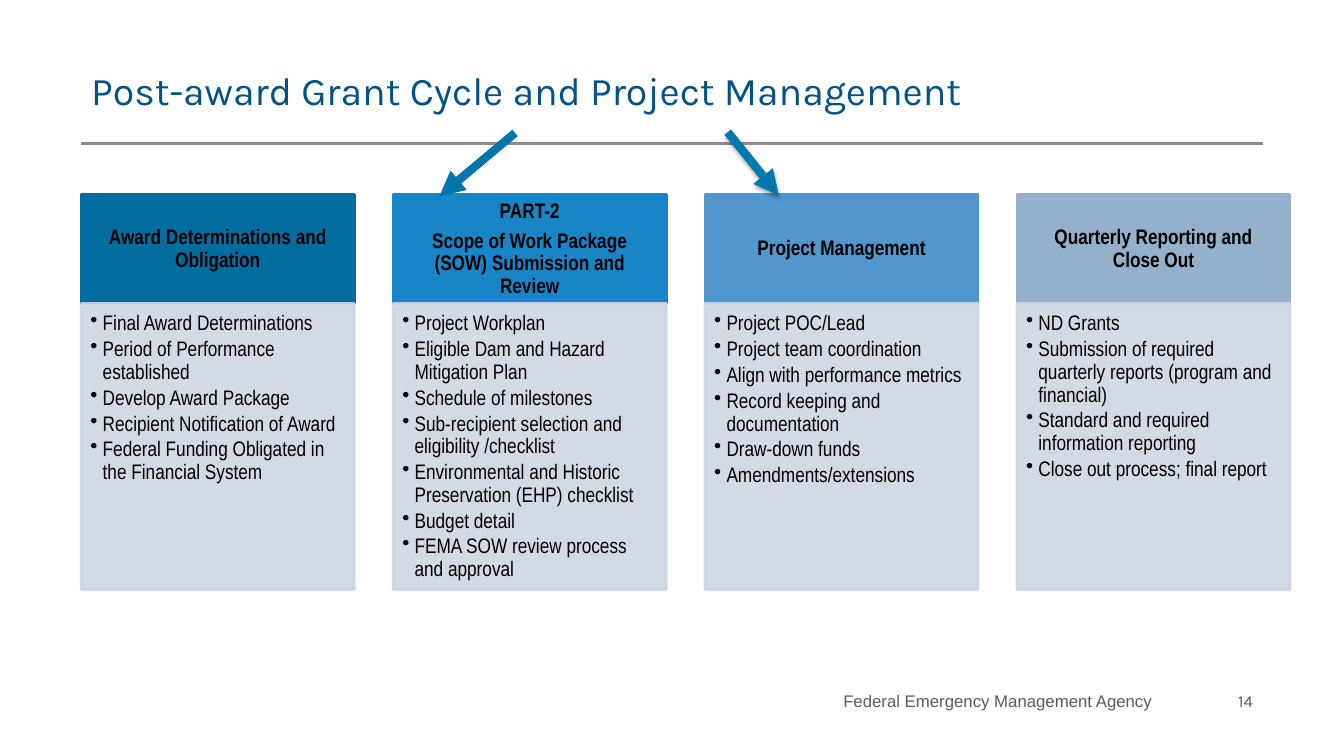
from dataclasses import dataclass

from lxml.etree import SubElement
from pptx import Presentation
from pptx.dml.color import RGBColor
from pptx.enum.shapes import MSO_CONNECTOR, MSO_SHAPE
from pptx.enum.text import MSO_ANCHOR, PP_ALIGN
from pptx.oxml.ns import qn
from pptx.shapes.autoshape import Shape
from pptx.shapes.connector import Connector
from pptx.slide import Slide
from pptx.text.text import TextFrame
from pptx.util import Cm, Pt

COLORS = {
    "title": "005288", "rule": "8A8C8F", "footer": "5A5B5D", "text": "000000",
    "body": "CCD6E3", "award": "006D9E", "scope": "1885C6", "project": "5197CE",
    "reporting": "95B0CB", "left_arrow": "0075AA", "right_arrow": "0078AE",
}
COLUMN_LEFT, COLUMN_PITCH, COLUMN_WIDTH = 2.05, 7.86, 6.88
HEADER_TOP, HEADER_HEIGHT, BODY_HEIGHT = 4.9, 2.75, 7.21


@dataclass
class Stage:
    color: str
    heading: str
    bullets: list[str]


@dataclass
class Label:
    text: str
    left: float
    top: float
    width: float
    height: float
    font: str
    size: int
    color: str
    align: PP_ALIGN


@dataclass
class Line:
    start: tuple[float, float]
    end: tuple[float, float]
    color: str
    width: float
    arrow: bool = True
    shadow: bool = False


STAGES = [
    Stage("award", "Award Determinations and Obligation", [
        "Final Award Determinations",
        "Period of Performance established",
        "Develop Award Package",
        "Recipient Notification of Award",
        "Federal Funding Obligated in the Financial System",
    ]),
    Stage("scope", "PART-2\nScope of Work Package (SOW) Submission and Review", [
        "Project Workplan",
        "Eligible Dam and Hazard Mitigation Plan",
        "Schedule of milestones",
        "Sub-recipient selection and eligibility /checklist",
        "Environmental and Historic Preservation (EHP) checklist",
        "Budget detail",
        "FEMA SOW review process and approval",
    ]),
    Stage("project", "Project Management", [
        "Project POC/Lead",
        "Project team coordination",
        "Align with performance metrics",
        "Record keeping and documentation",
        "Draw-down funds",
        "Amendments/extensions",
    ]),
    Stage("reporting", "Quarterly Reporting and Close Out", [
        "ND Grants",
        "Submission of required quarterly reports (program and financial)",
        "Standard and required information reporting",
        "Close out process; final report",
    ]),
]
LABELS = [
    Label("Post-award Grant Cycle and Project Management", 2.05, 1.25, 29.77, 2.05,
          "Karla", 28, "title", PP_ALIGN.LEFT),
    Label("Federal Emergency Management Agency", 16.94, 17.15, 12.35, 1.02,
          "Arial", 12, "footer", PP_ALIGN.RIGHT),
    Label("14", 29.29, 17.15, 2.54, 1.02, "Karla", 12, "footer", PP_ALIGN.RIGHT),
]
RULE = Line((2.05, 3.61), (31.82, 3.61), "rule", 2, arrow=False)
ARROWS = [
    Line((12.98, 3.35), (11.07, 4.95), "left_arrow", 6),
    Line((18.34, 3.33), (19.63, 4.93), "right_arrow", 6, shadow=True),
]


def rgb(name: str) -> RGBColor:
    return RGBColor.from_string(COLORS[name])


def style_text(text_frame: TextFrame, font: str, size: int, color: str,
               align: PP_ALIGN, bold: bool = False) -> None:
    text_frame.word_wrap = True
    for paragraph in text_frame.paragraphs:
        paragraph.alignment = align
        for run in paragraph.runs:
            run.font.name = font
            run.font.size = Pt(size)
            run.font.bold = bold
            run.font.color.rgb = rgb(color)


def add_label(slide: Slide, label: Label) -> None:
    box = slide.shapes.add_textbox(Cm(label.left), Cm(label.top), Cm(label.width), Cm(label.height))
    box.text_frame.text = label.text
    box.text_frame.vertical_anchor = MSO_ANCHOR.MIDDLE
    style_text(box.text_frame, label.font, label.size, label.color, label.align)


def add_line(slide: Slide, line: Line) -> Connector:
    points = [Cm(value) for value in (*line.start, *line.end)]
    connector = slide.shapes.add_connector(MSO_CONNECTOR.STRAIGHT, *points)
    connector.line.color.rgb = rgb(line.color)
    connector.line.width = Pt(line.width)
    properties = connector._element.spPr
    if line.arrow:
        SubElement(properties.find(qn("a:ln")), qn("a:tailEnd"), type="triangle")
    effects = SubElement(properties, qn("a:effectLst"))
    if line.shadow:
        shadow = SubElement(effects, qn("a:outerShdw"), blurRad=str(Pt(3.1)),
                            dist=str(Pt(1.8)), dir="5400000", rotWithShape="0")
        black = SubElement(shadow, qn("a:srgbClr"), val=COLORS["text"])
        SubElement(black, qn("a:alpha"), val="35000")
    return connector


def add_block(slide: Slide, left: float, top: float, height: float, color: str,
              text: str, insets: tuple[float, float, float, float]) -> Shape:
    shape = slide.shapes.add_shape(MSO_SHAPE.RECTANGLE, Cm(left), Cm(top), Cm(COLUMN_WIDTH), Cm(height))
    shape.shadow.inherit = False
    shape.fill.solid()
    shape.fill.fore_color.rgb = rgb(color)
    shape.line.color.rgb = rgb(color)
    shape.line.width = Pt(2)
    frame = shape.text_frame
    frame.text = text
    frame.margin_left, frame.margin_top, frame.margin_right, frame.margin_bottom = map(Cm, insets)
    return shape


def space_paragraphs(text_frame: TextFrame, after: float) -> None:
    for paragraph in text_frame.paragraphs:
        paragraph.line_spacing = 0.9
        paragraph.space_after = Pt(after)


def add_stage(slide: Slide, stage: Stage, left: float) -> None:
    header = add_block(slide, left, HEADER_TOP, HEADER_HEIGHT, stage.color,
                       stage.heading, (0.3, 0.17, 0.3, 0.17))
    header.text_frame.vertical_anchor = MSO_ANCHOR.MIDDLE
    style_text(header.text_frame, "Arial Narrow", 15, "text", PP_ALIGN.CENTER, bold=True)
    space_paragraphs(header.text_frame, 5.25)

    body = add_block(slide, left, HEADER_TOP + HEADER_HEIGHT, BODY_HEIGHT, "body",
                     "\n".join(stage.bullets), (0.23, 0.23, 0.3, 0.34))
    for color in body._element.spPr.iter(qn("a:srgbClr")):
        SubElement(color, qn("a:alpha"), val="90000")
    body.text_frame.vertical_anchor = MSO_ANCHOR.TOP
    style_text(body.text_frame, "Arial Narrow", 15, "text", PP_ALIGN.LEFT)
    space_paragraphs(body.text_frame, 2.25)
    for paragraph in body.text_frame.paragraphs:
        properties = paragraph._p.get_or_add_pPr()
        properties.set("marL", str(Cm(0.31)))
        properties.set("indent", str(Cm(-0.31)))
        SubElement(properties, qn("a:buChar"), char="•")


def main() -> None:
    """Build the slide on the post-award grant cycle and save it."""
    presentation = Presentation()
    presentation.slide_width, presentation.slide_height = Cm(33.87), Cm(19.05)
    slide = presentation.slides.add_slide(presentation.slide_layouts[6])
    add_line(slide, RULE)
    for index, stage in enumerate(STAGES):
        add_stage(slide, stage, COLUMN_LEFT + index * COLUMN_PITCH)
    for arrow in ARROWS:
        add_line(slide, arrow)
    for label in LABELS:
        add_label(slide, label)
    presentation.save("out.pptx")


if __name__ == "__main__":
    main()
